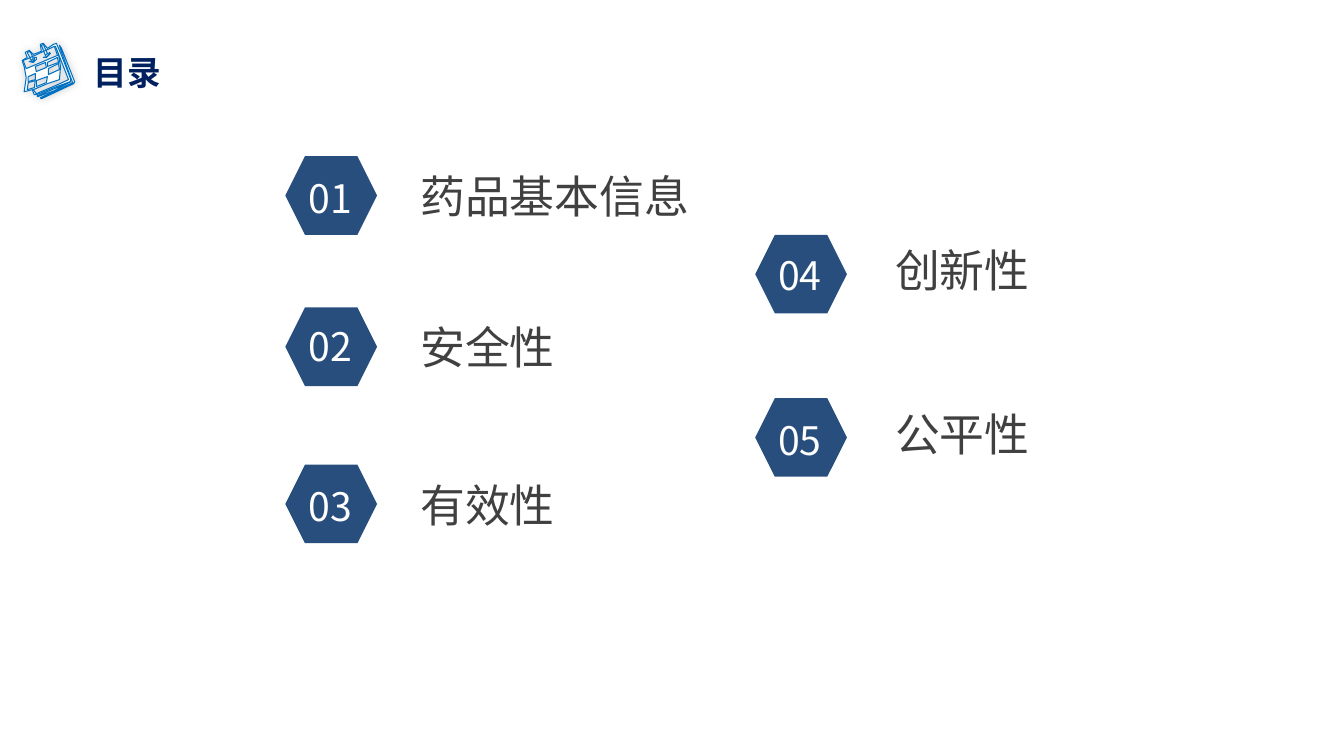
from dataclasses import dataclass

from lxml.etree import SubElement
from pptx import Presentation
from pptx.dml.color import RGBColor
from pptx.enum.shapes import MSO_SHAPE as Preset
from pptx.enum.text import MSO_ANCHOR as Anchor, MSO_AUTO_SIZE as AutoSize, PP_ALIGN as Align
from pptx.oxml import parse_xml
from pptx.oxml.ns import nsdecls, qn
from pptx.util import Emu, Pt


@dataclass(frozen=True)
class Theme:
    font: str = "Noto Sans CJK SC"
    title: str = "002060"
    hexagon: str = "284E7D"
    number: str = "FFFFFF"
    label: str = "404040"
    icon_fill: str = "FFFFFF"
    icon_line: str = "0070C0"
    title_size: int = 24
    number_size: int = 28
    label_size: int = 32


THEME = Theme()
PX = 9144  # 100 px to the inch


def px(*lengths):
    return [Emu(length * PX) for length in lengths]


def write(frame, text, size, color, bold=False):
    frame.text = text
    paragraph = frame.paragraphs[0]
    paragraph.alignment = Align.LEFT
    frame.vertical_anchor = Anchor.TOP
    font = paragraph.runs[0].font
    font.name = THEME.font
    font.size = Pt(size)
    font.bold = bold
    font.color.rgb = RGBColor.from_string(color)
    SubElement(font._element, qn("a:ea")).set("typeface", THEME.font)


deck = Presentation()
deck.slide_width, deck.slide_height = px(1333, 750)
slide = deck.slides.add_slide(deck.slide_layouts[5])
shapes = slide.shapes

# Calendar icon: page, header, cells, rings and the sheets behind
calendar_outlines = [
    [(22, 60), (27, 57), (25, 52), (29, 50), (33, 54), (41, 51), (40, 44),
     (43, 43), (47, 48), (53, 44), (56, 43), (61, 55), (70, 78), (70, 81),
     (56, 86), (36, 94), (34, 94), (32, 89), (24, 91), (26, 77), (24, 66)],
    [(55, 46), (59, 56), (68, 79), (55, 85), (36, 93), (33, 89), (47, 83),
     (59, 79), (60, 66), (58, 54)],
    [(23, 60), (28, 58), (54, 46), (57, 55), (31, 66), (26, 68)],
    [(36, 80), (47, 76), (46, 82), (36, 86)],
    [(28, 82), (35, 80), (34, 87), (27, 89)],
    [(28, 76), (35, 73), (35, 79), (28, 81)],
    [(48, 68), (58, 63), (59, 69), (48, 74)],
    [(35, 66), (45, 62), (46, 67), (36, 71)],
    [(47, 62), (57, 57), (58, 62), (47, 66)],
    [(27, 52), (29, 51), (31, 53), (33, 58), (31, 60)],
    [(41, 45), (43, 44), (47, 53), (45, 55)],
    [(34, 57), (36, 57), (36, 59), (33, 62), (29, 61), (32, 61), (34, 59)],
    [(49, 52), (50, 53), (46, 57), (43, 57), (47, 56)],
    [(70, 81), (54, 90), (37, 96), (37, 95), (54, 88)],
    [(59, 45), (61, 48), (74, 81), (73, 83), (41, 98), (40, 97), (72, 82), (60, 49)],
]
first_outline, *other_outlines = calendar_outlines
builder = shapes.build_freeform(*first_outline[0], scale=PX)
builder.add_line_segments(first_outline[1:])
for outline in other_outlines:
    builder.move_to(*outline[0])
    builder.add_line_segments(outline[1:])
calendar = builder.convert_to_shape()
calendar.fill.solid()
calendar.fill.fore_color.rgb = RGBColor.from_string(THEME.icon_fill)
calendar.line.color.rgb = RGBColor.from_string(THEME.icon_line)
calendar.line.width = Pt(0.75)
calendar._element.spPr.append(parse_xml(
    f'<a:effectLst {nsdecls("a")}>'
    f'<a:outerShdw blurRad="{Pt(6)}" dist="0" dir="18900000">'
    '<a:srgbClr val="000000"><a:alpha val="20000"/></a:srgbClr>'
    '</a:outerShdw></a:effectLst>'))

title = shapes.title
title.left, title.top, title.width, title.height = px(83, 46, 1008, 50)
write(title.text_frame, "目录", THEME.title_size, THEME.title, bold=True)

# Column: hexagon left, label left, then (label, hexagon top, number top, label top)
columns = [
    (283, 407, [("药品基本信息", 155, 168, 162),
                ("安全性", 305, 315, 312),
                ("有效性", 461, 474, 469)]),
    (749, 878, [("创新性", 233, 244, 236),
                ("公平性", 395, 408, 399)]),
]
number = 0
for hexagon_left, label_left, topics in columns:
    for topic, hexagon_top, number_top, label_top in topics:
        number += 1
        hexagon = shapes.add_shape(Preset.HEXAGON, *px(hexagon_left, hexagon_top, 91, 78))
        hexagon.shadow.inherit = False
        hexagon.fill.solid()
        hexagon.fill.fore_color.rgb = RGBColor.from_string(THEME.hexagon)
        hexagon.line.fill.background()

        label_width = 19 + 45 * len(topic)
        for text, box, size, color in [
            (f"{number:02}", (hexagon_left + 13, number_top, 66, 57),
             THEME.number_size, THEME.number),
            (topic, (label_left, label_top, label_width, 64),
             THEME.label_size, THEME.label),
        ]:
            frame = shapes.add_textbox(*px(*box)).text_frame
            frame.word_wrap = False
            frame.auto_size = AutoSize.SHAPE_TO_FIT_TEXT
            write(frame, text, size, color)

deck.save("out.pptx")
